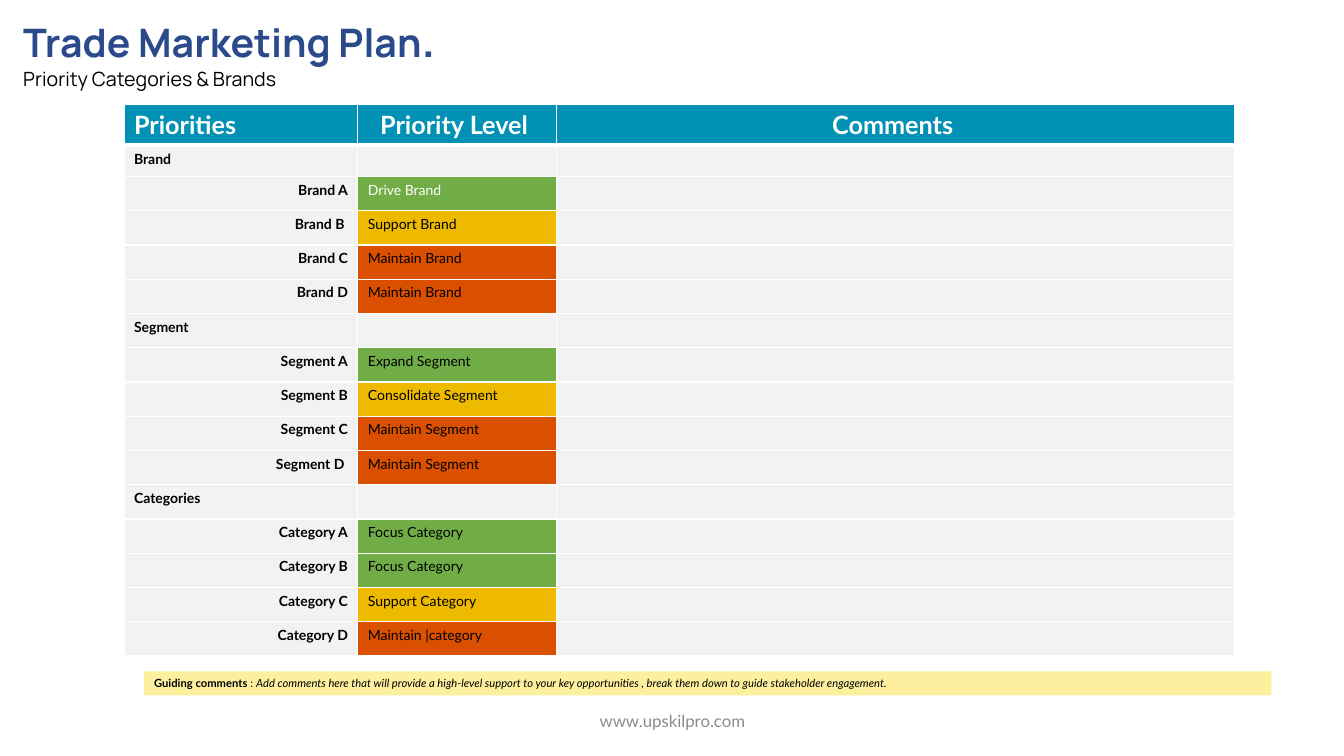
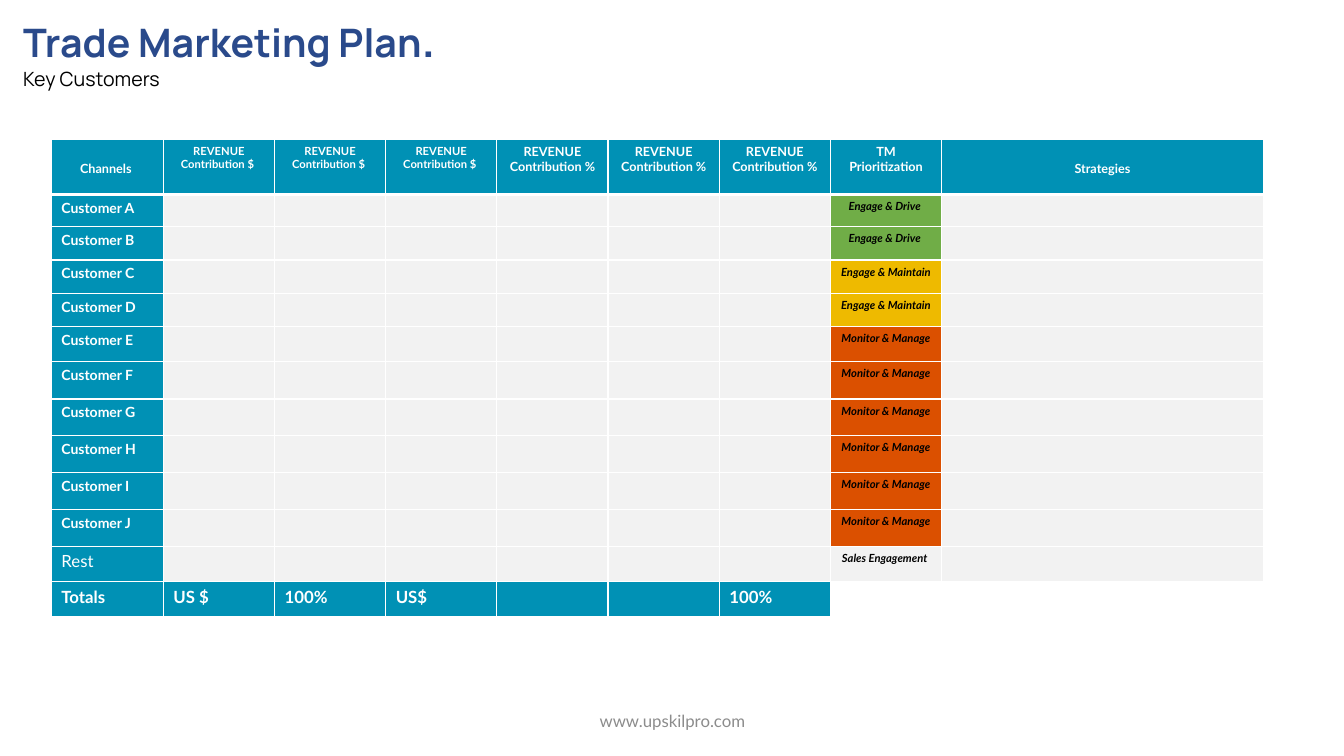
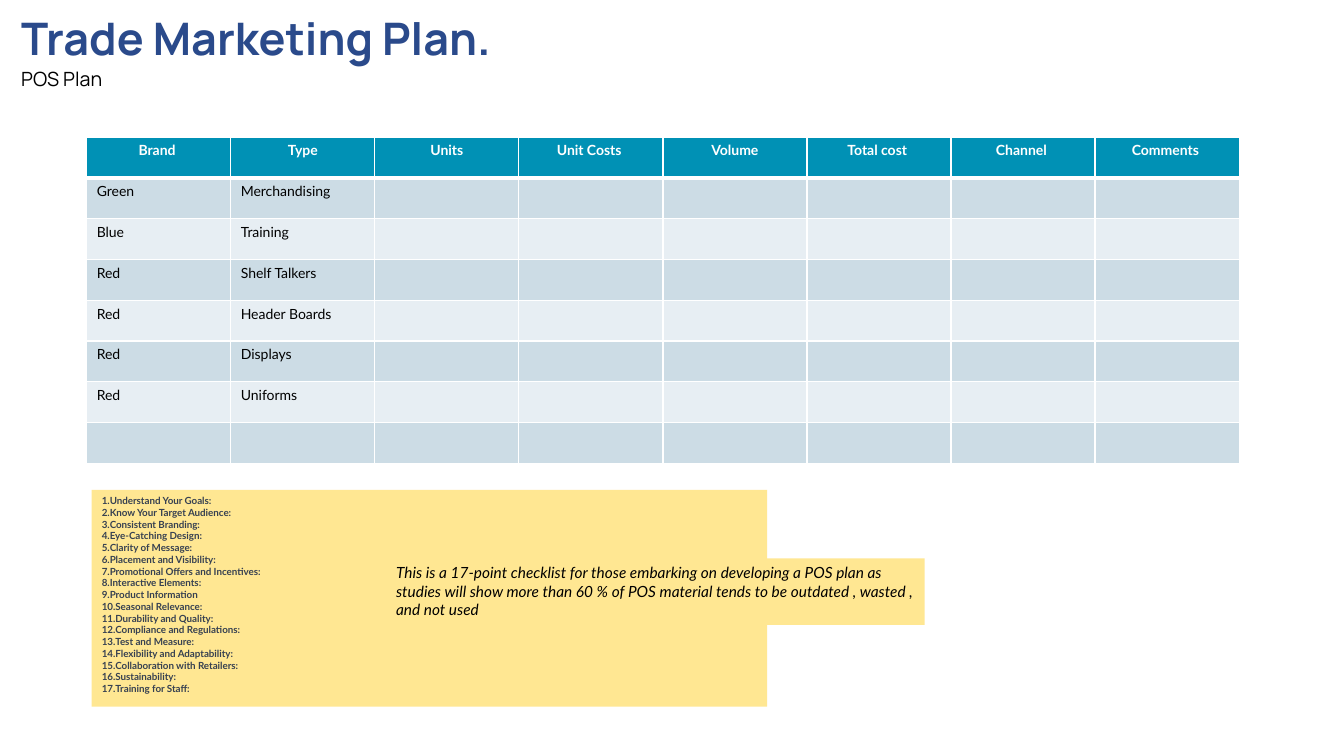
from lxml.etree import SubElement
from pptx import Presentation
from pptx.dml.color import RGBColor
from pptx.enum.shapes import MSO_SHAPE
from pptx.enum.text import MSO_ANCHOR, MSO_AUTO_SIZE, PP_ALIGN
from pptx.oxml.ns import qn
from pptx.util import Inches, Pt

NAVY = RGBColor(0x2A, 0x4A, 0x8B)
TEAL = RGBColor(0x00, 0x91, 0xB5)
WHITE = RGBColor(0xFF, 0xFF, 0xFF)
BLACK = RGBColor(0x00, 0x00, 0x00)
SLATE = RGBColor(0x37, 0x41, 0x51)
FOOTER_GRAY = RGBColor(0x8C, 0x8C, 0x8C)
LIGHT_GRAY = RGBColor(0xF2, 0xF2, 0xF2)
GREEN = RGBColor(0x70, 0xAD, 0x47)
AMBER = RGBColor(0xEE, 0xBA, 0x00)
ORANGE = RGBColor(0xDB, 0x50, 0x00)
BAND_DARK = RGBColor(0xCC, 0xDC, 0xE5)
BAND_LIGHT = RGBColor(0xE7, 0xEE, 0xF3)
PALE_YELLOW = RGBColor(0xFC, 0xF0, 0x9F)
NOTE_YELLOW = RGBColor(0xFF, 0xE7, 0x92)

BODY_FONT, TITLE_FONT = "Lato", "Manrope"
TITLE_ONLY, TITLE_AND_CONTENT = 5, 1

PRIORITY_HEADERS = ["Priorities", "Priority Level ", "Comments "]
PRIORITY_GROUPS = [
    ("Brand", [("Brand A", "Drive Brand", GREEN),
               ("Brand B ", "Support Brand", AMBER),
               ("Brand C", "Maintain Brand", ORANGE),
               ("Brand D", "Maintain Brand", ORANGE)]),
    ("Segment", [("Segment A", "Expand Segment", GREEN),
                 ("Segment B", "Consolidate Segment", AMBER),
                 ("Segment C", "Maintain Segment", ORANGE),
                 ("Segment D ", "Maintain Segment", ORANGE)]),
    ("Categories", [("Category A", "Focus Category", GREEN),
                    ("Category B", "Focus Category", GREEN),
                    ("Category C", "Support Category", AMBER),
                    ("Category D", "Maintain |category", ORANGE)]),
]
GUIDANCE = [
    ("Guiding comments ", {"bold": True}),
    (": ", {}),
    ("Add comments here that will provide a high-level support to your key "
     "opportunities , break them down to guide stakeholder engagement.", {"italic": True}),
]

CUSTOMER_HEADERS = (
    [("Channels ", 9)] + [("REVENUE\nContribution $ ", 8)] * 3
    + [("REVENUE\nContribution %", 9)] * 3
    + [("TM\nPrioritization", 9), ("Strategies", 9)]
)
ENGAGEMENTS = [
    ("AB", "Engage & Drive ", GREEN),
    ("CD", "Engage & Maintain", AMBER),
    ("EFGHIJ", "Monitor & Manage ", ORANGE),
]
TOTALS = ["Totals", "US $", "100%", "US$", "", "", "100%"]

POS_HEADERS = ["Brand ", "Type", "Units", "Unit Costs ", "Volume", "Total cost ",
               "Channel ", "Comments "]
POS_ITEMS = [("Green", "Merchandising"), ("Blue", "Training"), ("Red", "Shelf Talkers"),
             ("Red", "Header Boards"), ("Red", "Displays"), ("Red", "Uniforms"), ("", "")]
CHECKLIST = [
    "Understand Your Goals:", "Know Your Target Audience:", "Consistent Branding:",
    "Eye-Catching Design:", "Clarity of Message:", "Placement and Visibility:",
    "Promotional Offers and Incentives:", "Interactive Elements:", "Product Information",
    "Seasonal Relevance:", "Durability and Quality:", "Compliance and Regulations:",
    "Test and Measure:", "Flexibility and Adaptability:", "Collaboration with Retailers:",
    "Sustainability:", "Training for Staff:",
]
CHECKLIST_NOTE = (
    "This is a 17-point checklist for those embarking on developing a POS plan as studies "
    "will show more than 60 % of POS material tends to be outdated , wasted , and not used"
)


def write(paragraph, text, size=10, color=BLACK, bold=False, italic=False,
          font=BODY_FONT, align=PP_ALIGN.LEFT):
    paragraph.alignment = align
    run = paragraph.add_run()
    run.text = text
    run.font.size, run.font.name = Pt(size), font
    run.font.bold, run.font.italic = bold, italic
    run.font.color.rgb = color


def next_paragraph(frame):
    """Return the frame's first paragraph while it is unused, otherwise a new one."""
    first = frame.paragraphs[0]
    return frame.add_paragraph() if first.runs else first


def place(shape, left, top, width, height):
    shape.left, shape.top = Inches(left), Inches(top)
    shape.width, shape.height = Inches(width), Inches(height)


def paint(target, color):
    target.fill.solid()
    target.fill.fore_color.rgb = color


def prepare_frame(shape, anchor=MSO_ANCHOR.TOP):
    frame = shape.text_frame
    frame.auto_size = MSO_AUTO_SIZE.NONE
    frame.word_wrap = True
    frame.vertical_anchor = anchor
    return frame


def start_slide(layout, subtitle, left=0.13, top=0.08, width=11, title_size=28,
                subtitle_spacing=1, backing=WHITE):
    slide = deck.slides.add_slide(deck.slide_layouts[layout])
    title = slide.shapes.title
    place(title, left, top, width, 0.88)
    if backing:
        paint(title, backing)
    frame = prepare_frame(title)
    heading = next_paragraph(frame)
    for text, size in [("Trade Marketing Plan", title_size), (".", 32)]:
        write(heading, text, size=size, color=NAVY, bold=True, font=TITLE_FONT)
    line = next_paragraph(frame)
    line.line_spacing = subtitle_spacing
    write(line, subtitle, size=14, font=TITLE_FONT)
    return slide


def add_footer(slide):
    footer = slide.shapes.add_textbox(Inches(4.42), Inches(6.95), Inches(4.5), Inches(0.4))
    write(next_paragraph(prepare_frame(footer, MSO_ANCHOR.MIDDLE)), "www.upskilpro.com",
          size=12, color=FOOTER_GRAY, align=PP_ALIGN.CENTER)


def add_note(slide, left, top, width, height, fill):
    note = slide.shapes.add_shape(MSO_SHAPE.RECTANGLE, Inches(left), Inches(top),
                                  Inches(width), Inches(height))
    note.shadow.inherit = False
    paint(note, fill)
    note.line.fill.background()
    return next_paragraph(prepare_frame(note))


def set_borders(cell, bottom):
    properties = cell._tc.get_or_add_tcPr()
    sides = [("a:lnL", 1), ("a:lnR", 1), ("a:lnT", 1), ("a:lnB", bottom)]
    for position, (side, width) in enumerate(sides):
        line = properties.makeelement(qn(side), {"w": str(Pt(width))})
        SubElement(SubElement(line, qn("a:solidFill")), qn("a:srgbClr"), val=str(WHITE))
        properties.insert(position, line)


def cell_of(text="", fill=LIGHT_GRAY, **text_format):
    return text, fill, text_format


def header_of(text, size=10, align=PP_ALIGN.CENTER):
    return cell_of(text, TEAL, size=size, color=WHITE, bold=True, align=align)


def add_grid(slide, left, top, widths, heights, rows):
    table = slide.shapes.add_table(len(rows), len(widths), Inches(left), Inches(top),
                                   Inches(sum(widths)), Inches(sum(heights))).table
    table.horz_banding = False
    for column, width in zip(table.columns, widths):
        column.width = Inches(width)
    for r, (row, height) in enumerate(zip(rows, heights)):
        table.rows[r].height = Inches(height)
        for c, (text, fill, text_format) in enumerate(row):
            cell = table.cell(r, c)
            paint(cell, fill)
            set_borders(cell, bottom=1 if r else 3)
            for line in text.split("\n"):
                paragraph = next_paragraph(cell.text_frame)
                if line:
                    write(paragraph, line, **text_format)
                else:
                    SubElement(paragraph._p, qn("a:endParaRPr"), sz="1000")
    return table


def build_priorities():
    slide = start_slide(TITLE_ONLY, "Priority Categories & Brands")
    add_footer(slide)
    aligns = [PP_ALIGN.LEFT, PP_ALIGN.CENTER, PP_ALIGN.CENTER]
    rows = [[header_of(text, 18, align) for text, align in zip(PRIORITY_HEADERS, aligns)]]
    for group, members in PRIORITY_GROUPS:
        rows.append([cell_of(group, bold=True), cell_of(), cell_of()])
        for name, level, fill in members:
            level_color = WHITE if level == "Drive Brand" else BLACK
            rows.append([cell_of(name, bold=True, align=PP_ALIGN.RIGHT),
                         cell_of(level, fill, color=level_color), cell_of()])
    add_grid(slide, 1.23, 1.04, [2.32, 1.97, 6.73], [0.4, 0.31] + [0.34] * 14, rows)
    guidance = add_note(slide, 1.43, 6.66, 11.18, 0.24, PALE_YELLOW)
    for text, text_format in GUIDANCE:
        write(guidance, text, size=8, **text_format)


def build_customers():
    slide = start_slide(TITLE_ONLY, "Key Customers")
    add_footer(slide)

    def customer_row(label, action, fill, **label_format):
        return ([cell_of(label, TEAL, color=WHITE, **label_format)] + [cell_of()] * 6
                + [cell_of(action, fill, size=8, bold=True, italic=True,
                           align=PP_ALIGN.CENTER), cell_of()])

    rows = [[header_of(text, size) for text, size in CUSTOMER_HEADERS]]
    for letters, action, fill in ENGAGEMENTS:
        rows += [customer_row(f"Customer {letter}", action, fill, bold=True)
                 for letter in letters]
    rows.append(customer_row("Rest", "Sales Engagement ", LIGHT_GRAY, size=12))
    rows.append([header_of(text, 12, PP_ALIGN.LEFT) for text in TOTALS]
                + [cell_of(fill=WHITE)] * 2)
    total_width, channel_width, strategy_width = 12.02, 1.11, 3.19
    figure_width = (total_width - channel_width - strategy_width) / 7
    widths = [channel_width] + [figure_width] * 7 + [strategy_width]
    heights = ([0.55, 0.32] + [0.33] * 3 + [0.35]
               + [0.37, 0.36, 0.37, 0.37, 0.36] + [0.35] * 2)
    table = add_grid(slide, 0.51, 1.38, widths, heights, rows)
    for column in (0, len(CUSTOMER_HEADERS) - 1):
        table.cell(0, column).margin_top = Inches(0.22)


def build_pos_plan():
    slide = start_slide(TITLE_AND_CONTENT, "POS Plan", left=0.11, top=0.06, width=7.01,
                        title_size=32, subtitle_spacing=1.07, backing=None)
    rows = [[header_of(text) for text in POS_HEADERS]]
    for index, item in enumerate(POS_ITEMS):
        band = BAND_LIGHT if index % 2 else BAND_DARK
        blanks = [""] * (len(POS_HEADERS) - len(item))
        rows.append([cell_of(text, band) for text in [*item, *blanks]])
    columns = len(POS_HEADERS)
    add_grid(slide, 0.86, 1.36, [11.43 / columns] * columns,
             [3.24 / len(rows)] * len(rows), rows)

    checklist = slide.placeholders[1]
    place(checklist, 0.91, 4.86, 6.7, 2.15)
    paint(checklist, NOTE_YELLOW)
    frame = prepare_frame(checklist)
    for point in CHECKLIST:
        paragraph = next_paragraph(frame)
        properties = paragraph._p.get_or_add_pPr()
        properties.set("marL", "0")
        properties.set("indent", "0")
        SubElement(properties, qn("a:buFont"), typeface="+mj-lt")
        SubElement(properties, qn("a:buAutoNum"), type="arabicPeriod")
        paragraph.space_before = Pt(0)
        write(paragraph, point, size=7, color=SLATE, bold=True)
    write(add_note(slide, 3.83, 5.54, 5.34, 0.66, NOTE_YELLOW), CHECKLIST_NOTE,
          size=11, italic=True)


deck = Presentation()
deck.slide_width, deck.slide_height = Inches(13.33), Inches(7.5)
build_priorities()
build_customers()
build_pos_plan()
deck.save("out.pptx")
